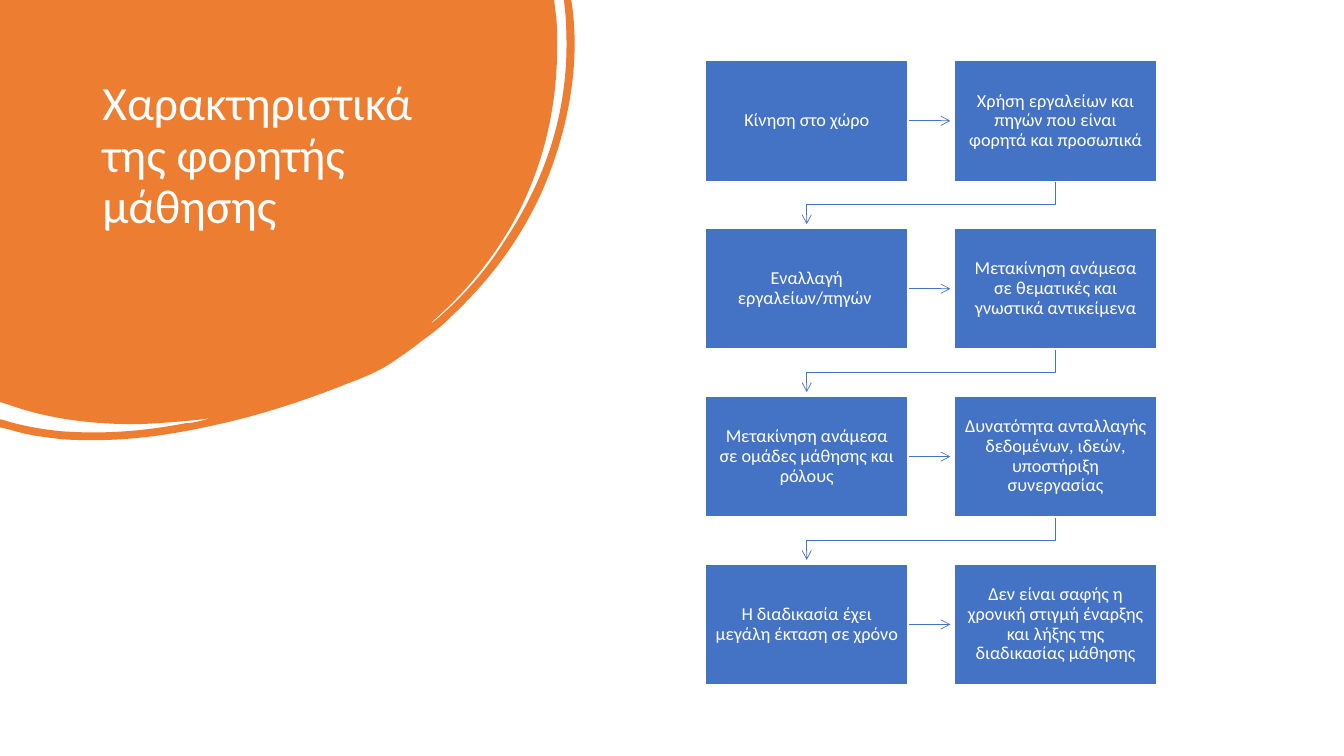
from lxml.etree import SubElement
from pptx import Presentation
from pptx.dml.color import RGBColor
from pptx.enum.shapes import MSO_CONNECTOR, MSO_SHAPE
from pptx.enum.text import MSO_ANCHOR, MSO_AUTO_SIZE, PP_ALIGN
from pptx.oxml.ns import qn
from pptx.util import Cm, Pt

RECTANGLE = MSO_SHAPE.RECTANGLE
STRAIGHT, ELBOW = MSO_CONNECTOR.STRAIGHT, MSO_CONNECTOR.ELBOW
TOP, MIDDLE = MSO_ANCHOR.TOP, MSO_ANCHOR.MIDDLE
LEFT, CENTER = PP_ALIGN.LEFT, PP_ALIGN.CENTER
NO_AUTOFIT = MSO_AUTO_SIZE.NONE

ORANGE = RGBColor(0xED, 0x7D, 0x31)
BLUE = RGBColor(0x44, 0x72, 0xC4)
WHITE = RGBColor(0xFF, 0xFF, 0xFF)
FONT = "Calibri"

TITLE = "Χαρακτηριστικά της φορητής μάθησης"
STEPS = [
    "Κίνηση στο χώρο",
    "Χρήση εργαλείων και πηγών που είναι φορητά και προσωπικά",
    "Εναλλαγή εργαλείων/πηγών ",
    "Μετακίνηση ανάμεσα σε θεματικές και γνωστικά αντικείμενα",
    "Μετακίνηση ανάμεσα σε ομάδες μάθησης και ρόλους",
    "Δυνατότητα ανταλλαγής δεδομένων, ιδεών, υποστήριξη συνεργασίας",
    "Η διαδικασία έχει μεγάλη έκταση σε χρόνο",
    "Δεν είναι σαφής η χρονική στιγμή έναρξης και λήξης της διαδικασίας μάθησης",
]

BLOB_GRID_WIDTH = 571
BLOB_OUTLINE = [
    (550, 0), (552, 17),
    (553, 26, 553, 36, 553, 45), (553, 101, 542, 154, 518, 204),
    (496, 249, 465, 288, 427, 321), (429, 321, 430, 319, 432, 318),
    (459, 295, 482, 269, 501, 239), (543, 176, 565, 107, 562, 30),
    (562, 21, 561, 12, 560, 3),
    (560, 0), (567, 0), (568, 7),
    (574, 54, 568, 102, 553, 150), (533, 214, 497, 268, 448, 314),
    (439, 323, 429, 331, 419, 338), (409, 346, 399, 353, 387, 361),
    (375, 369, 360, 375, 344, 381), (299, 399, 252, 414, 203, 424),
    (157, 434, 110, 439, 63, 436), (45, 434, 28, 432, 12, 427),
    (0, 424), (0, 416), (4, 417),
    (23, 423, 42, 426, 61, 428), (103, 431, 143, 428, 184, 420),
    (189, 420, 193, 419, 198, 418), (202, 417, 206, 416, 210, 415),
    (186, 418, 161, 420, 136, 421), (92, 421, 48, 416, 7, 401),
    (0, 399),
]


def write_text(shape, text, size, color=WHITE, align=CENTER, anchor=MIDDLE,
               inset_x=Cm(0.25), inset_y=Cm(0.25)):
    """Write one formatted paragraph into a shape."""
    frame = shape.text_frame
    frame.text = text
    frame.word_wrap = True
    frame.auto_size = NO_AUTOFIT
    frame.vertical_anchor = anchor
    frame.margin_left = frame.margin_right = inset_x
    frame.margin_top = frame.margin_bottom = inset_y
    paragraph = frame.paragraphs[0]
    paragraph.alignment = align
    paragraph.line_spacing = 0.9
    font = paragraph.runs[0].font
    font.name, font.size, font.color.rgb = FONT, Pt(size), color


def draw_blob(slide, left, top, width):
    """Draw the orange brush shape in the corner, with true curves."""
    unit = width / BLOB_GRID_WIDTH
    builder = slide.shapes.build_freeform(0, 0)
    builder.add_line_segments([(s[-2] * unit, s[-1] * unit) for s in BLOB_OUTLINE], close=True)
    blob = builder.convert_to_shape(left, top)
    lines = list(blob.element.iter(qn("a:lnTo")))
    for line, segment in zip(lines, BLOB_OUTLINE):
        if len(segment) == 6:
            line.tag = qn("a:cubicBezTo")
            for position in (0, 1):
                x, y = segment[2 * position:2 * position + 2]
                control = SubElement(line, qn("a:pt"), x=str(round(x * unit)), y=str(round(y * unit)))
                line.insert(position, control)
    blob.shadow.inherit = False
    blob.fill.solid()
    blob.fill.fore_color.rgb = ORANGE
    blob.line.fill.background()


def place_title(slide, left, top, width, height):
    """Place the title in front of the brush shape."""
    title = slide.shapes.title
    title.left, title.top, title.width, title.height = left, top, width, height
    write_text(title, TITLE, 34, align=LEFT, anchor=TOP, inset_y=Cm(0.13))
    title.element.getparent().append(title.element)


def draw_arrow(slide, kind, begin, end):
    """Draw a thin blue connector with an open arrowhead."""
    arrow = slide.shapes.add_connector(kind, *begin, *end)
    arrow.line.color.rgb = BLUE
    arrow.line.width = Pt(0.5)
    outline = arrow.element.spPr.find(qn("a:ln"))
    SubElement(outline, qn("a:tailEnd"), type="arrow")
    SubElement(arrow.element.spPr, qn("a:effectLst"))
    return arrow


def draw_return_arrow(slide, start_x, start_y, end_x, end_y):
    """Draw an elbow that goes down, left and down to the next row."""
    center_x, center_y = (start_x + end_x) // 2, (start_y + end_y) // 2
    half_drop, half_run = (end_y - start_y) // 2, (start_x - end_x) // 2
    arrow = draw_arrow(slide, ELBOW, (center_x - half_drop, center_y - half_run),
                       (center_x + half_drop, center_y + half_run))
    arrow.element.spPr.find(qn("a:xfrm")).set("rot", "5400000")
    adjustments = arrow.element.spPr.find(qn("a:prstGeom")).get_or_add_avLst()
    SubElement(adjustments, qn("a:gd"), name="adj1", fmla="val 54000")


def draw_step(slide, text, left, top, width, height):
    """Draw one blue step of the process."""
    step = slide.shapes.add_shape(RECTANGLE, left, top, width, height)
    step.shadow.inherit = False
    step.fill.solid()
    step.fill.fore_color.rgb = BLUE
    step.line.color.rgb = WHITE
    step.line.width = Pt(1)
    write_text(step, text, 13)


def draw_process(slide, left, top, width, height):
    """Draw the steps two to a row, joined by arrows."""
    step_width, step_height, arrow_gap = Cm(5.1), Cm(3.05), Cm(0.1)
    column_pitch = width - step_width
    row_pitch = (height - step_height) // (len(STEPS) // 2 - 1)
    for index, text in enumerate(STEPS):
        row, column = divmod(index, 2)
        x, y = left + column * column_pitch, top + row * row_pitch
        if column == 0:
            middle = y + step_height // 2
            draw_arrow(slide, STRAIGHT, (x + step_width, middle),
                       (x + column_pitch - arrow_gap, middle))
        elif index < len(STEPS) - 1:
            center = x + step_width // 2
            draw_return_arrow(slide, center, y + step_height,
                              center - column_pitch, y + row_pitch - arrow_gap)
        draw_step(slide, text, x, y, step_width, step_height)


def main():
    """Build and save the slide."""
    deck = Presentation()
    deck.slide_width, deck.slide_height = Cm(33.87), Cm(19.05)
    slide = deck.slides.add_slide(deck.slide_layouts[5])
    draw_blob(slide, Cm(0), Cm(0), Cm(14.5))
    place_title(slide, Cm(2.33), Cm(1.88), Cm(8.94), Cm(5.64))
    draw_process(slide, Cm(17.78), Cm(1.52), Cm(11.37), Cm(15.74))
    deck.save("out.pptx")


if __name__ == "__main__":
    main()
